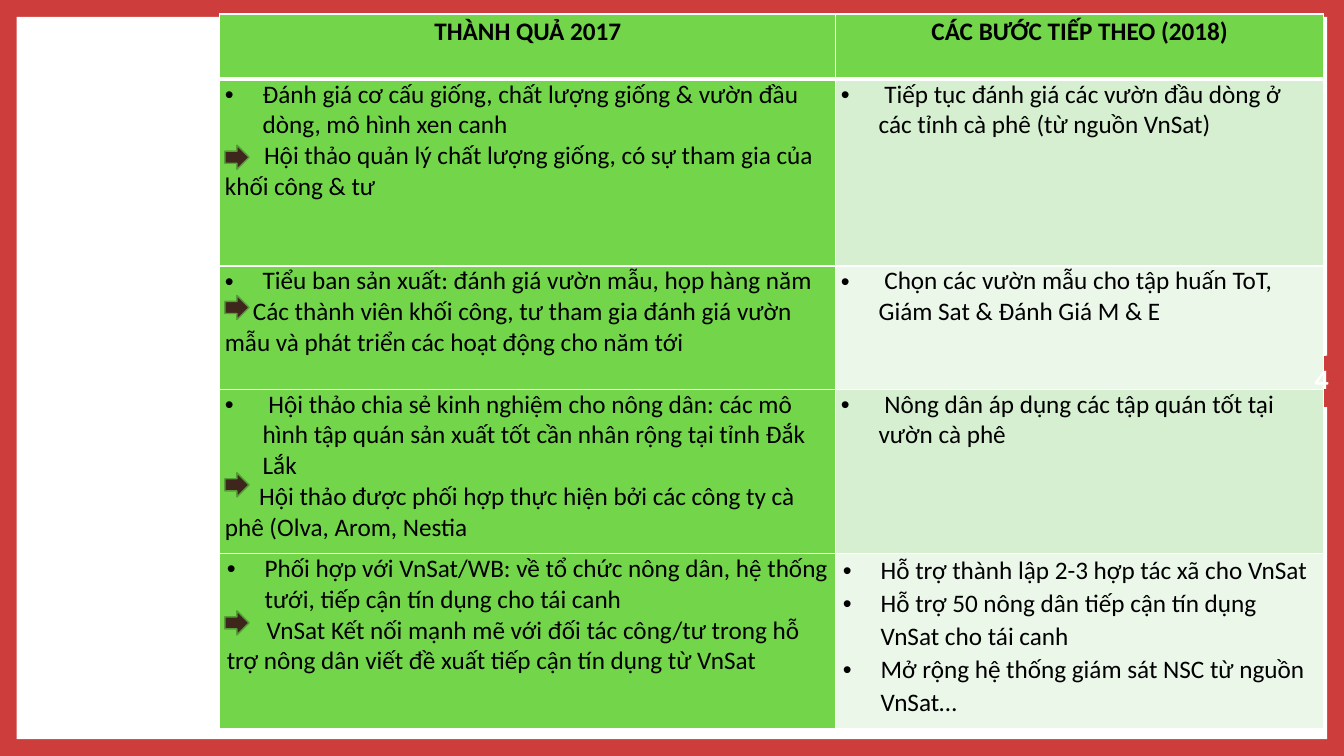
from math import cos, pi, sin

from lxml import etree
from pptx import Presentation
from pptx.dml.color import RGBColor
from pptx.enum.shapes import MSO_SHAPE
from pptx.enum.text import MSO_ANCHOR, PP_ALIGN
from pptx.oxml.ns import qn
from pptx.util import Pt

ARROW = MSO_SHAPE.RIGHT_ARROW
CENTER = PP_ALIGN.CENTER
LEFT = PP_ALIGN.LEFT
MIDDLE = MSO_ANCHOR.MIDDLE

RED = RGBColor(0xCC, 0x3D, 0x3B)
WHITE = RGBColor(0xFF, 0xFF, 0xFF)
BLACK = RGBColor(0, 0, 0)
GREEN = RGBColor(0x72, 0xD5, 0x4A)
PALE = RGBColor(0xD5, 0xEF, 0xD0)
FAINT = RGBColor(0xEB, 0xF7, 0xE9)
BROWN = RGBColor(0x3F, 0x26, 0x1D)
LEAF = RGBColor(0x54, 0x9E, 0x37)

FONT = "Calibri"
HANG = 27
HEADS = ["THÀNH QUẢ 2017", "CÁC BƯỚC TIẾP THEO (2018)"]
COLS = [440, 348.5]
HEIGHTS = [46.5, 133.5, 88, 117.5, 125]

# Each row: result, follow-up beside the arrow, its first-line indent, next steps
ROWS = [
    ("Đánh giá cơ cấu giống, chất lượng giống & vườn đầu dòng, mô hình xen canh",
     "Hội thảo quản lý chất lượng giống, có sự tham gia của khối công & tư", 28,
     [" Tiếp tục đánh giá các vườn đầu dòng ở các tỉnh cà phê (từ nguồn VnSat)"]),
    ("Tiểu ban sản xuất: đánh giá vườn mẫu, họp hàng năm",
     "Các thành viên khối công, tư tham gia đánh giá vườn mẫu và phát triển "
     "các hoạt động cho năm tới", 20,
     [" Chọn các vườn mẫu cho tập huấn ToT, Giám Sat & Đánh Giá M & E"]),
    (" Hội thảo chia sẻ kinh nghiệm cho nông dân: các mô hình tập quán sản xuất "
     "tốt cần nhân rộng tại tỉnh Đắk Lắk",
     "Hội thảo được phối hợp thực hiện bởi các công ty cà phê "
     "(Olva, Arom, Nestia", 24.5,
     [" Nông dân áp dụng các tập quán tốt tại vườn cà phê"]),
    ("Phối hợp với VnSat/WB: về tổ chức nông dân, hệ thống tưới, tiếp cận tín "
     "dụng cho tái canh",
     "VnSat Kết nối mạnh mẽ với đối tác công/tư trong hỗ trợ nông dân viết đề "
     "xuất tiếp cận tín dụng từ VnSat", 28.5,
     ["Hỗ trợ thành lập 2-3 hợp tác xã cho VnSat",
      "Hỗ trợ 50 nông dân tiếp cận tín dụng VnSat cho tái canh",
      "Mở rộng hệ thống giám sát NSC từ nguồn VnSat…"]),
]
ARROW_TOPS = [103.7, 211, 337.7, 436.3]


def write(frame, text, size=18, color=BLACK, bold=False, align=LEFT,
          space=None, indent=0, bullet=False):
    """Fill the first paragraph, or add one if it is already used."""
    para = frame.paragraphs[0]
    if para.runs:
        para = frame.add_paragraph()
    props = para._p.get_or_add_pPr()
    props.set("marL", str(Pt(HANG if bullet else 0)))
    props.set("indent", str(Pt(-HANG if bullet else indent)))
    if bullet:
        etree.SubElement(props, qn("a:buFont"), typeface="Arial")
        etree.SubElement(props, qn("a:buChar"), char="•")
    para.alignment = align
    if space:
        para.line_spacing = space
    run = para.add_run()
    run.text = text
    font = run.font
    font.name, font.size, font.bold = FONT, Pt(size), bold
    font.color.rgb = color


def dress(cell, color, side=3.6, top=1, base=1):
    """Set the margins, borders and fill of a table cell."""
    cell.margin_left = cell.margin_right = Pt(side)
    cell.margin_top = cell.margin_bottom = 0
    props = cell._tc.get_or_add_tcPr()
    for edge, width in (("L", 1), ("R", 1), ("T", top), ("B", base)):
        line = etree.SubElement(props, qn("a:ln" + edge), w=str(Pt(width)))
        fill = etree.SubElement(line, qn("a:solidFill"))
        etree.SubElement(fill, qn("a:srgbClr"), val=str(WHITE))
    cell.fill.solid()
    cell.fill.fore_color.rgb = color


def add_panel(slide):
    """White panel with a round notch at the right for the page number."""
    right, mid, radius, steps = 948, 272.5, 18.4, 24
    notch = [(right - 0.5 - radius * sin(pi * i / steps),
              mid - radius * cos(pi * i / steps)) for i in range(steps + 1)]
    points = [(right, 12), (right, mid - radius), *notch,
              (right, mid + radius), (right, 528), (12, 528)]
    path = slide.shapes.build_freeform(Pt(12), Pt(12))
    path.add_line_segments([(Pt(x), Pt(y)) for x, y in points], close=True)
    panel = path.convert_to_shape()
    panel.shadow.inherit = False
    panel.fill.solid()
    panel.fill.fore_color.rgb = WHITE
    panel.line.fill.background()


def add_grid(slide):
    """Table of results and next steps."""
    grid = slide.shapes.add_table(
        len(HEIGHTS), len(COLS), Pt(157), Pt(10),
        Pt(sum(COLS)), Pt(sum(HEIGHTS))).table
    grid.first_row = grid.horz_banding = False
    for col, width in zip(grid.columns, COLS):
        col.width = Pt(width)
    for row, height in zip(grid.rows, HEIGHTS):
        row.height = Pt(height)

    for i, head in enumerate(HEADS):
        cell = grid.cell(0, i)
        dress(cell, GREEN, base=3)
        write(cell.text_frame, head, bold=True, align=CENTER, space=1.07)

    for i, (done, follow, indent, plans) in enumerate(ROWS, 1):
        left, right = grid.cell(i, 0), grid.cell(i, 1)
        side = 5 if i == len(ROWS) else 3.6
        top = 3 if i == 1 else 1
        dress(left, GREEN, side, top)
        dress(right, PALE if i % 2 else FAINT, side, top)
        write(left.text_frame, done, bullet=True)
        write(left.text_frame, follow, indent=indent)
        for plan in plans:
            write(right.text_frame, plan, bullet=True,
                  space=1.07 if len(plans) > 1 else None)


def add_number(slide, text):
    """Page number in the notch."""
    box = slide.shapes.add_textbox(Pt(928), Pt(259.2), Pt(32), Pt(28.8))
    frame = box.text_frame
    frame.word_wrap = True
    frame.vertical_anchor = MIDDLE
    frame.margin_left = frame.margin_right = 0
    frame.margin_top = frame.margin_bottom = 0
    write(frame, text, size=20, color=WHITE, bold=True, align=CENTER,
          space=Pt(16.9))


def add_arrow(slide, top):
    """Small arrow that marks a follow-up."""
    arrow = slide.shapes.add_shape(ARROW, Pt(160.6), Pt(top), Pt(17.3), Pt(17.3))
    arrow.shadow.inherit = False
    arrow.fill.solid()
    arrow.fill.fore_color.rgb = BROWN
    arrow.line.color.rgb = LEAF
    arrow.line.width = Pt(1)


def main():
    deck = Presentation()
    deck.slide_width, deck.slide_height = Pt(960), Pt(540)
    slide = deck.slides.add_slide(deck.slide_layouts[6])

    # Red frame and white panel
    slide.background.fill.solid()
    slide.background.fill.fore_color.rgb = RED
    add_panel(slide)

    # Content
    add_grid(slide)
    add_number(slide, "4")
    for top in ARROW_TOPS:
        add_arrow(slide, top)

    deck.save("out.pptx")


if __name__ == "__main__":
    main()
